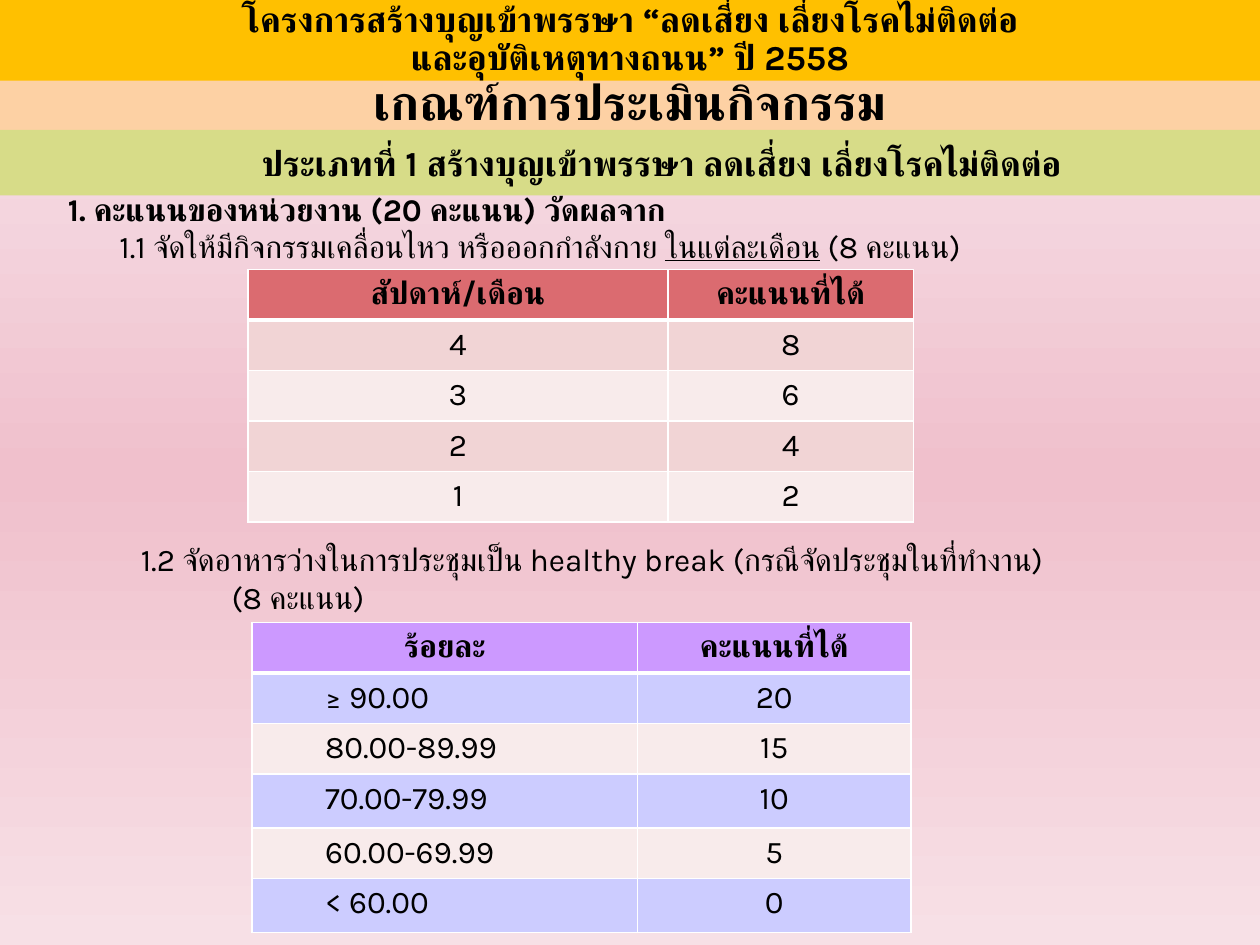
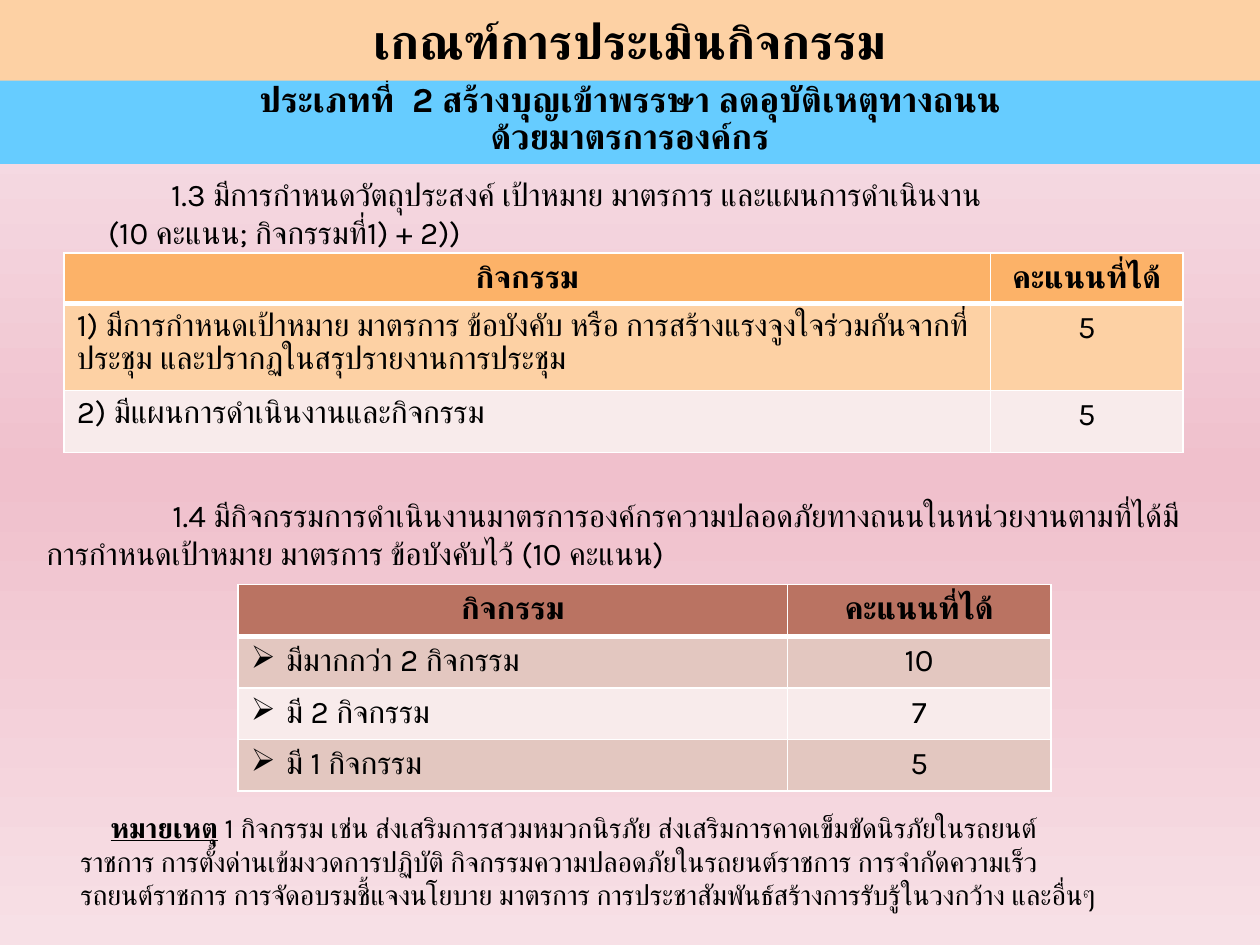
from copy import deepcopy
from dataclasses import dataclass

from lxml import etree
from pptx import Presentation
from pptx.dml.color import RGBColor
from pptx.enum.shapes import MSO_SHAPE
from pptx.enum.text import MSO_ANCHOR, MSO_AUTO_SIZE, PP_ALIGN
from pptx.oxml.ns import qn
from pptx.util import Inches, Pt

RECTANGLE = MSO_SHAPE.RECTANGLE
TOP, MIDDLE, BOTTOM = MSO_ANCHOR.TOP, MSO_ANCHOR.MIDDLE, MSO_ANCHOR.BOTTOM
NO_FIT = MSO_AUTO_SIZE.NONE
LEFT, CENTER = PP_ALIGN.LEFT, PP_ALIGN.CENTER
TITLE_ONLY = 5


@dataclass(frozen=True)
class Theme:
    font: str = "Karla"
    ink: str = "000000"
    border: str = "FFFFFF"
    gradient: tuple = ((0, "F7E6ED"), (0.5, "F0C0CC"), (1, "F7E0E6"))
    peach: str = "FDD1A4"
    gold: str = "FFC000"
    lime: str = "D7DC88"
    sky: str = "66CCFF"
    pale: str = "F8EBEB"
    red: tuple = ("DB6B70", "F1D4D5")
    violet: tuple = ("CC99FF", "CCCCFF")
    orange: tuple = ("FCB268", "FDD1A4")
    brown: tuple = ("BA7362", "E3C7C0")
    title_size: int = 28
    band_size: int = 20
    body_size: int = 18
    note_size: int = 16


@dataclass(frozen=True)
class Span:
    text: str
    bold: bool = False
    underline: bool = False


@dataclass(frozen=True)
class Para:
    spans: tuple
    align: PP_ALIGN = LEFT
    margin: float = 0
    first: float = 0
    spacing: float = 1.0
    bullet: str = ""


def plain(text, **layout):
    return Para((Span(text),), **layout)


def bold(text, **layout):
    return Para((Span(text, bold=True),), **layout)


class DeckBuilder:
    def __init__(self, theme):
        self.theme = theme
        self.deck = Presentation()
        self.deck.slide_width = Inches(10)
        self.deck.slide_height = Inches(7.5)
        self.page = None
        self.paint_background()

    def paint_background(self):
        master = self.deck.slide_master
        fill = master.background.fill
        fill.gradient()
        fill.gradient_angle = 270
        stop_list = master.element.find(".//" + qn("a:gsLst"))
        stop_list.insert(1, deepcopy(stop_list[0]))
        for stop, (position, color) in zip(fill.gradient_stops, self.theme.gradient):
            stop.position = position
            stop.color.rgb = RGBColor.from_string(color)

    def add_page(self):
        self.page = self.deck.slides.add_slide(self.deck.slide_layouts[TITLE_ONLY])

    def fill(self, target, color):
        target.fill.solid()
        target.fill.fore_color.rgb = RGBColor.from_string(color)

    def add_paras(self, frame, paras, size):
        for index, para in enumerate(paras):
            paragraph = frame.add_paragraph() if index else frame.paragraphs[0]
            paragraph.alignment = para.align
            paragraph.line_spacing = para.spacing
            paragraph.space_before = Pt(0)
            properties = paragraph._p.get_or_add_pPr()
            properties.set("marL", str(Inches(para.margin)))
            properties.set("indent", str(Inches(para.first)))
            if para.bullet:
                etree.SubElement(properties, qn("a:buChar"), char=para.bullet)
            for span in para.spans:
                for part, line in enumerate(span.text.split("\n")):
                    if part:
                        paragraph.add_line_break()
                    run = paragraph.add_run()
                    run.text = line
                    font = run.font
                    font.size = Pt(size)
                    font.bold = span.bold
                    font.underline = span.underline
                    font.color.rgb = RGBColor.from_string(self.theme.ink)
                    font.name = self.theme.font
                    etree.SubElement(run._r.rPr, qn("a:cs"), typeface=self.theme.font)

    def title(self, text, top, height, color, size):
        box = self.page.shapes.title
        box.left, box.top = Inches(0), Inches(top)
        box.width, box.height = Inches(10), Inches(height)
        self.fill(box, color)
        frame = box.text_frame
        frame.auto_size = NO_FIT
        frame.vertical_anchor = BOTTOM
        self.add_paras(frame, [bold(text, align=CENTER, spacing=0.9)], size)

    def band(self, paras, top, height, color, size, anchor=MIDDLE, bottom=0.05):
        box = self.page.shapes.add_shape(
            RECTANGLE, Inches(0), Inches(top), Inches(10), Inches(height))
        box.shadow.inherit = False
        box.line.fill.background()
        self.fill(box, color)
        frame = box.text_frame
        frame.word_wrap = True
        frame.vertical_anchor = anchor
        frame.margin_bottom = Inches(bottom)
        self.add_paras(frame, paras, size)

    def text(self, paras, left, top, width, height, size=None, anchor=TOP):
        box = self.page.shapes.add_textbox(
            Inches(left), Inches(top), Inches(width), Inches(height))
        frame = box.text_frame
        frame.word_wrap = True
        frame.vertical_anchor = anchor
        self.add_paras(frame, paras, size or self.theme.body_size)

    def borders(self, cell, bottom):
        properties = cell._tc.get_or_add_tcPr()
        for side, points in (("L", 1), ("R", 1), ("T", 1), ("B", bottom)):
            line = etree.SubElement(properties, qn("a:ln" + side), w=str(Pt(points)))
            solid = etree.SubElement(line, qn("a:solidFill"))
            etree.SubElement(solid, qn("a:srgbClr"), val=self.theme.border)

    def table(self, header, rows, left, top, widths, heights, colors, **label_layout):
        table = self.page.shapes.add_table(
            len(heights), len(widths), Inches(left), Inches(top),
            Inches(sum(widths)), Inches(sum(heights))).table
        table.first_row = table.horz_banding = False
        for column, width in zip(table.columns, widths):
            column.width = Inches(width)
        for row, height in zip(table.rows, heights):
            row.height = Inches(height)
        header_color, stripe = colors
        contents = [[bold(text, align=CENTER) for text in header]]
        contents += [[plain(label, **label_layout), plain(score, align=CENTER)]
                     for label, score in rows]
        for row_index, paras in enumerate(contents):
            color = stripe if row_index % 2 else self.theme.pale
            for column_index, para in enumerate(paras):
                cell = table.cell(row_index, column_index)
                self.borders(cell, bottom=1 if row_index else 3)
                self.fill(cell, color if row_index else header_color)
                self.add_paras(cell.text_frame, [para], self.theme.body_size)


CRITERIA = "เกณฑ์การประเมินกิจกรรม"
SCORE = "คะแนนที่ได้"
ACTIVITY = "กิจกรรม"


def health_page(builder):
    theme = builder.theme
    builder.add_page()
    builder.title(CRITERIA, 0.6, 0.49, theme.peach, theme.title_size)
    builder.band(
        [bold("ประเภทที่ 1 สร้างบุญเข้าพรรษา ลดเสี่ยง เลี่ยงโรคไม่ติดต่อ",
              align=CENTER, first=0.5)],
        1.03, 0.52, theme.lime, theme.band_size)
    project = ("โครงการสร้างบุญเข้าพรรษา “ลดเสี่ยง เลี่ยงโรคไม่ติดต่อ",
               "และอุบัติเหตุทางถนน” ปี 2558")
    builder.band([bold(line, align=CENTER, spacing=0.9) for line in project],
                 0, 0.64, theme.gold, theme.band_size)
    builder.text(
        [bold("1. คะแนนของหน่วยงาน (20 คะแนน) วัดผลจาก"),
         Para((Span("1.1 จัดให้มีกิจกรรมเคลื่อนไหว หรือออกกำลังกาย "),
               Span("ในแต่ละเดือน", underline=True),
               Span(" (8 คะแนน)")), margin=0.41)],
        0.44, 1.45, 8.46, 0.71, anchor=MIDDLE)
    builder.table(
        ("สัปดาห์/เดือน", SCORE),
        [(str(weeks), str(weeks * 2)) for weeks in range(4, 0, -1)],
        1.97, 2.14, (3.33, 1.95), [0.4] * 5, theme.red, align=CENTER)
    builder.text(
        [plain("1.2 จัดอาหารว่างในการประชุมเป็น healthy break (กรณีจัดประชุมในที่ทำงาน)",
               first=0.29),
         plain("(8 คะแนน)", margin=1.01)],
        0.73, 4.23, 8.97, 0.71, anchor=MIDDLE)
    builder.table(
        ("ร้อยละ", SCORE),
        [("≥ 90.00", "20"), ("80.00-89.99", "15"), ("70.00-79.99", "10"),
         ("60.00-69.99", "5"), ("< 60.00", "0")],
        2, 4.94, (3.06, 2.17), (0.4, 0.4, 0.4, 0.43, 0.4, 0.43),
        theme.violet, margin=0.48)


def road_safety_page(builder):
    theme = builder.theme
    builder.add_page()
    builder.title("ประเภทที่  2 สร้างบุญเข้าพรรษา ลดอุบัติเหตุทางถนน\nด้วยมาตรการองค์กร",
                  0.62, 0.68, theme.sky, theme.band_size)
    builder.band([bold(CRITERIA, align=CENTER, spacing=0.9)],
                 0, 0.64, theme.peach, theme.title_size, BOTTOM, 0.08)
    builder.text(
        [plain("1.3 มีการกำหนดวัตถุประสงค์ เป้าหมาย มาตรการ และแผนการดำเนินงาน", first=1),
         plain("(10 คะแนน; กิจกรรมที่1) + 2))", first=0.5)],
        0.26, 1.34, 9.4, 0.71)
    builder.table(
        (ACTIVITY, SCORE),
        [("1) มีการกำหนดเป้าหมาย มาตรการ ข้อบังคับ หรือ การสร้างแรงจูงใจร่วมกันจากที่ประชุม "
          "และปรากฏในสรุปรายงานการประชุม", "5"),
         ("2) มีแผนการดำเนินงานและกิจกรรม", "5")],
        0.51, 2.01, (7.35, 1.53), (0.4, 0.69, 0.49), theme.orange, spacing=0.9)
    builder.text(
        [plain("1.4 มีกิจกรรมการดำเนินงานมาตรการองค์กรความปลอดภัยทางถนนในหน่วยงานตามที่ได้มี"
               "การกำหนดเป้าหมาย มาตรการ ข้อบังคับไว้ (10 คะแนน)", first=1)],
        0.27, 3.89, 9.4, 0.71)
    builder.table(
        (ACTIVITY, SCORE),
        [("มีมากกว่า 2 กิจกรรม", "10"), ("มี 2 กิจกรรม", "7"), ("มี 1 กิจกรรม", "5")],
        1.89, 4.64, (4.36, 2.09), [0.41] * 4, theme.brown,
        margin=0.28, first=-0.28, bullet="➢")
    builder.text(
        [Para((Span("หมายเหตุ", bold=True, underline=True),
               Span(" 1 กิจกรรม เช่น ส่งเสริมการสวมหมวกนิรภัย ส่งเสริมการคาดเข็มขัดนิรภัยในรถยนต์")),
              first=0.49),
         plain("ราชการ การตั้งด่านเข้มงวดการปฏิบัติ กิจกรรมความปลอดภัยในรถยนต์ราชการ การจำกัดความเร็ว",
               first=0.25),
         plain("รถยนต์ราชการ การจัดอบรมชี้แจงนโยบาย มาตรการ การประชาสัมพันธ์สร้างการรับรู้ในวงกว้าง และอื่นๆ",
               first=0.25)],
        0.29, 6.38, 9.65, 0.91, theme.note_size, MIDDLE)


def main():
    builder = DeckBuilder(Theme())
    health_page(builder)
    road_safety_page(builder)
    builder.deck.save("out.pptx")


if __name__ == "__main__":
    main()
